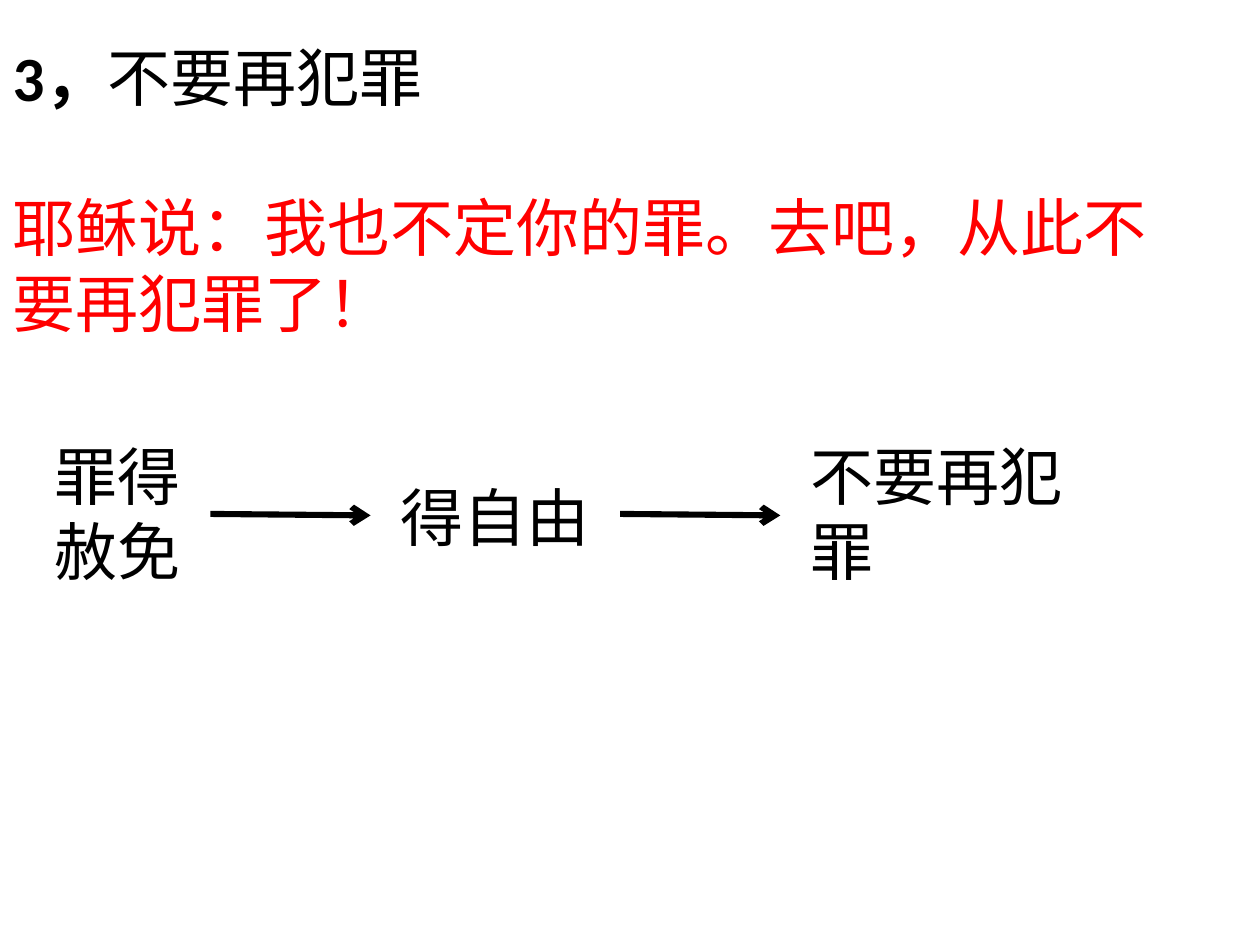
from lxml import etree
from pptx import Presentation
from pptx.dml.color import RGBColor
from pptx.enum import shapes, text
from pptx.oxml.ns import qn
from pptx.util import Cm, Pt


def colour(hex_value):
    return RGBColor.from_string(hex_value)


def write(box, runs):
    """Fill a shape with (wording, colour, bold) runs."""
    frame = box.text_frame
    frame.word_wrap = True
    frame.auto_size = text.MSO_AUTO_SIZE.SHAPE_TO_FIT_TEXT
    frame.vertical_anchor = text.MSO_ANCHOR.TOP
    paragraph = frame.paragraphs[0]
    paragraph.alignment = text.PP_ALIGN.LEFT
    for wording, hex_value, bold in runs:
        run = paragraph.add_run()
        run.text = wording
        run.font.name = "Calibri"
        run.font.size = Pt(36)
        run.font.bold = bold
        run.font.color.rgb = colour(hex_value)


BLACK, RED = "000000", "FF0000"

prs = Presentation()
prs.slide_width, prs.slide_height = Cm(25.4), Cm(19.05)
slide = prs.slides.add_slide(prs.slide_layouts[5])

# Heading
heading = slide.shapes.title
heading.left, heading.top = Cm(0), Cm(0.64)
heading.width, heading.height = Cm(24.56), Cm(1.8)
write(heading, [("3，", BLACK, True), ("不要再犯罪", BLACK, False)])

# Verse
verse = slide.shapes.add_textbox(Cm(0), Cm(3.68), Cm(24.56), Cm(3.33))
write(verse, [("耶稣说：我也不定你的罪。去吧，从此不要再犯罪了！", RED, False)])

# Three steps from forgiveness to a new life
steps = [
    ("罪得赦免", 0.84, 8.69, 3.18, 3.33),
    ("得自由", 7.82, 9.53, 4.65, 1.8),
    ("不要再犯罪", 16.08, 8.69, 6.35, 3.33),
]
for wording, left, top, width, height in steps:
    step = slide.shapes.add_textbox(Cm(left), Cm(top), Cm(width), Cm(height))
    write(step, [(wording, BLACK, False)])

# Arrows between the steps
for start in (4.24, 12.5):
    arrow = slide.shapes.add_connector(
        shapes.MSO_CONNECTOR.STRAIGHT,
        Cm(start), Cm(10.36), Cm(start + 3.23), Cm(10.39))
    arrow.line.color.rgb = colour(BLACK)
    arrow.line.width = Pt(3.5)
    etree.SubElement(arrow.line._get_or_add_ln(), qn("a:tailEnd"), type="arrow")
    etree.SubElement(arrow._element.spPr, qn("a:effectLst"))

prs.save("out.pptx")
